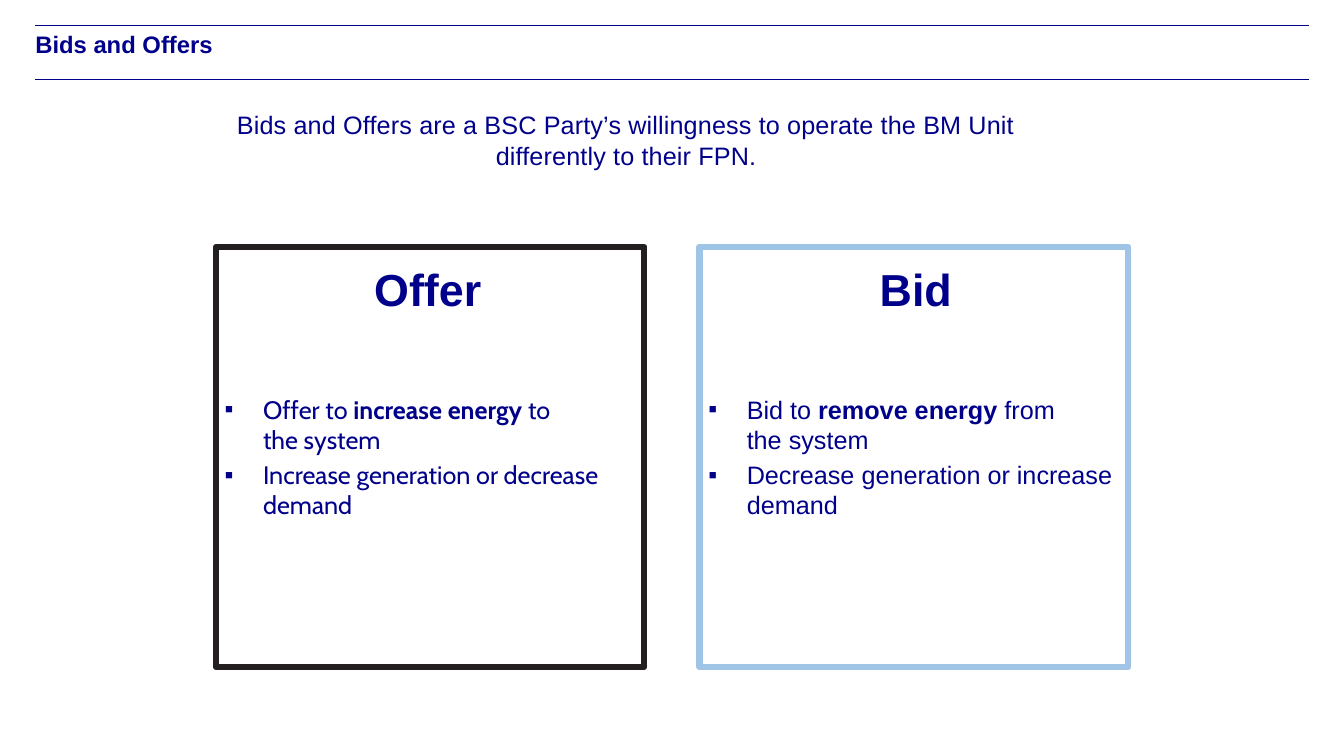
from lxml import etree
from pptx import Presentation
from pptx.dml.color import RGBColor
from pptx.enum.shapes import MSO_CONNECTOR, MSO_SHAPE
from pptx.enum.text import MSO_ANCHOR, MSO_AUTO_SIZE, PP_ALIGN
from pptx.oxml.ns import qn
from pptx.util import Cm, Pt

STRAIGHT = MSO_CONNECTOR.STRAIGHT
RECTANGLE = MSO_SHAPE.RECTANGLE
TOP, MIDDLE = MSO_ANCHOR.TOP, MSO_ANCHOR.MIDDLE
LEFT, CENTER = PP_ALIGN.LEFT, PP_ALIGN.CENTER
NO_AUTOFIT = MSO_AUTO_SIZE.NONE

COLOURS = {"navy": "00008B", "white": "FFFFFF", "black": "231F20", "sky": "A0C4E5"}
MARGIN, CONTENT_WIDTH = 0.89, 32.11
PANEL_TOP, PANEL_WIDTH, PANEL_HEIGHT = 6.22, 10.8, 10.59
HEADING_TOP, HEADING_WIDTH, HEADING_HEIGHT = 6.48, 10.34, 1.63

PANELS = [
    {
        "heading": "Offer", "left": 5.44, "heading_left": 5.61,
        "border": "black", "font": "Cabin", "opacity": 90,
        "points": [
            [("Offer to ", False), ("increase energy ", True), ("to\vthe system", False)],
            [("Increase generation or decrease demand", False)],
        ],
    },
    {
        "heading": "Bid", "left": 17.63, "heading_left": 17.91,
        "border": "sky", "font": "Arial", "opacity": 100,
        "points": [
            [("Bid to ", False), ("remove energy ", True), ("from\vthe system", False)],
            [("Decrease generation or increase demand", False)],
        ],
    },
]


def colour(name):
    return RGBColor.from_string(COLOURS[name])


class SlideBuilder:
    def __init__(self, slide, font="Arial", ink="navy"):
        self.slide = slide
        self.font = font
        self.ink = ink

    def style(self, run, size, bold=False, font=None):
        run.font.name = font or self.font
        run.font.size = Pt(size)
        run.font.bold = bold
        run.font.color.rgb = colour(self.ink)

    def clear_insets(self, frame):
        frame.margin_left = frame.margin_right = 0
        frame.margin_top = frame.margin_bottom = 0

    def title(self, text, top, height):
        title = self.slide.shapes.title
        title.left, title.top = Cm(MARGIN), Cm(top)
        title.width, title.height = Cm(CONTENT_WIDTH), Cm(height)
        frame = title.text_frame
        frame.text = text
        frame.auto_size = NO_AUTOFIT
        frame.vertical_anchor = TOP
        self.clear_insets(frame)
        frame.paragraphs[0].alignment = LEFT
        self.style(frame.paragraphs[0].runs[0], 17, bold=True)

    def rule(self, top):
        rule = self.slide.shapes.add_connector(
            STRAIGHT, Cm(MARGIN), Cm(top), Cm(MARGIN + CONTENT_WIDTH), Cm(top))
        rule.line.color.rgb = colour(self.ink)
        rule.line.width = Pt(0.5)
        etree.SubElement(rule._element.spPr, qn("a:effectLst"))

    def text(self, text, left, top, width, height, size, bold=False, spacing=None):
        box = self.slide.shapes.add_textbox(Cm(left), Cm(top), Cm(width), Cm(height))
        frame = box.text_frame
        frame.word_wrap = True
        frame.text = text.replace("\n", "\v")
        paragraph = frame.paragraphs[0]
        paragraph.alignment = CENTER
        for run in paragraph.runs:
            self.style(run, size, bold)
            if spacing:
                run.font._element.set("spc", str(spacing))

    def bullet(self, paragraph):
        properties = paragraph._p.get_or_add_pPr()
        properties.set("marL", str(Cm(1.19)))
        properties.set("indent", str(Cm(-0.97)))
        etree.SubElement(properties, qn("a:buFont"), typeface="Arial")
        etree.SubElement(properties, qn("a:buChar"), char="▪")

    def panel(self, left, border, opacity, font, points):
        panel = self.slide.shapes.add_shape(
            RECTANGLE, Cm(left), Cm(PANEL_TOP), Cm(PANEL_WIDTH), Cm(PANEL_HEIGHT))
        panel.shadow.inherit = False
        panel.fill.solid()
        panel.fill.fore_color.rgb = colour("white")
        if opacity < 100:
            fill = panel._element.spPr.find(qn("a:solidFill"))
            etree.SubElement(fill[0], qn("a:alpha"), val=str(opacity * 1000))
        panel.line.color.rgb = colour(border)
        panel.line.width = Pt(4.5)
        etree.SubElement(panel._element.spPr.find(qn("a:ln")), qn("a:round"))
        frame = panel.text_frame
        frame.word_wrap = True
        frame.vertical_anchor = MIDDLE
        self.clear_insets(frame)
        for level, parts in enumerate(points):
            paragraph = frame.add_paragraph() if level else frame.paragraphs[0]
            self.bullet(paragraph)
            paragraph.alignment = LEFT
            paragraph.level = level
            if level:
                paragraph.space_before = Pt(3.6)
            for words, bold in parts:
                for index, line in enumerate(words.split("\v")):
                    if index:
                        paragraph.add_line_break()
                    run = paragraph.add_run()
                    run.text = line
                    self.style(run, 18, bold, font)


def main():
    deck = Presentation()
    deck.slide_width, deck.slide_height = Cm(33.87), Cm(19.05)
    builder = SlideBuilder(deck.slides.add_slide(deck.slide_layouts[5]))
    for top in (0.64, 2.01):
        builder.rule(top)
    builder.title("Bids and Offers", 0.76, 1.24)
    for panel in PANELS:
        builder.panel(panel["left"], panel["border"], panel["opacity"],
                      panel["font"], panel["points"])
        builder.text(panel["heading"], panel["heading_left"], HEADING_TOP,
                     HEADING_WIDTH, HEADING_HEIGHT, 32, bold=True)
    builder.text(
        "Bids and Offers are a BSC Party’s willingness to operate the BM Unit\n"
        "differently to their FPN.",
        2.03, 2.64, 27.51, 3.02, 18, spacing=10)
    deck.save("out.pptx")


if __name__ == "__main__":
    main()
